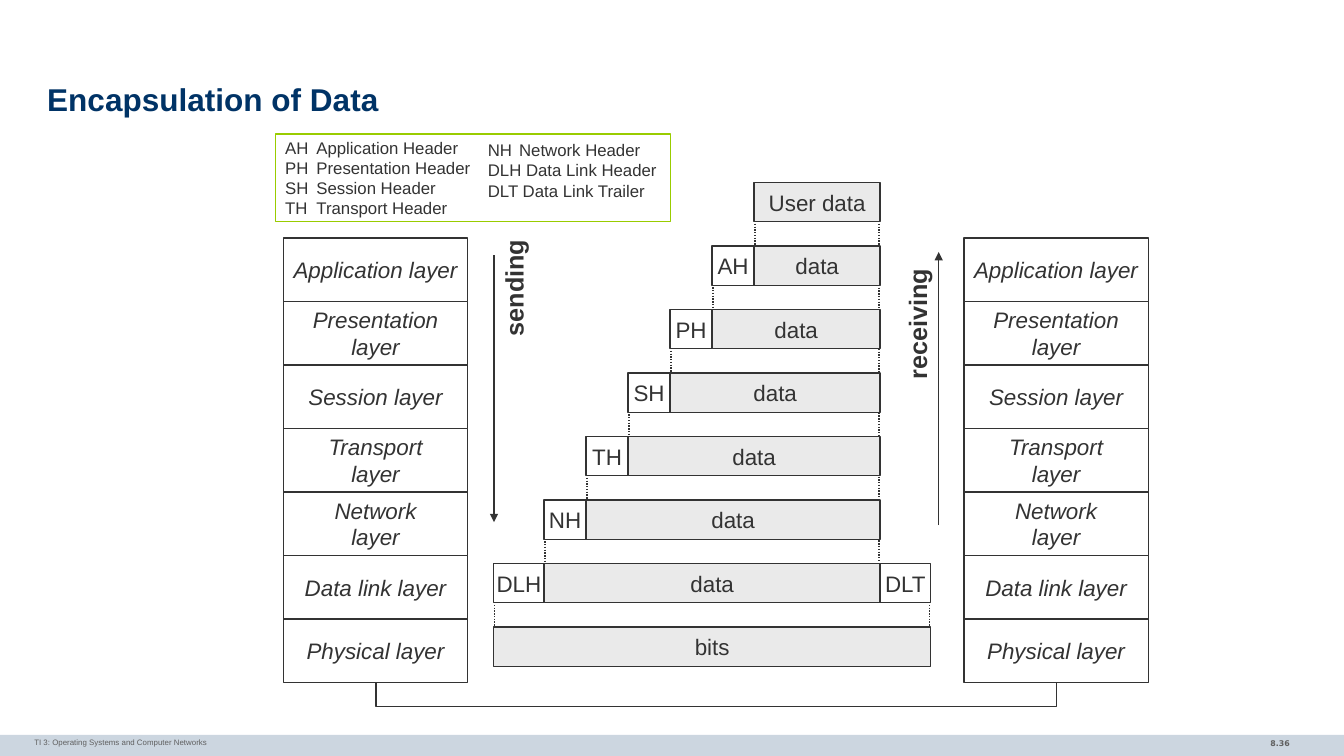
from dataclasses import dataclass

import lxml.etree
import pptx
import pptx.dml.color
import pptx.enum.dml
import pptx.enum.shapes
import pptx.enum.text
import pptx.oxml.ns
import pptx.slide
import pptx.util

Inches = pptx.util.Inches
Align = pptx.enum.text.PP_ALIGN
Anchor = pptx.enum.text.MSO_ANCHOR

INK = "333333"
WHITE = "FFFFFF"
GREY = "EAEAEA"
NAVY = "003366"
FOOTER_GREY = "5F5F5F"
ROW_PITCH = 0.63
STACK_TOP = 2.36
LAYER_WIDTH = 1.83
UNIT_TOP = 1.81
UNIT_HEIGHT = 0.39
DATA_RIGHT = 8.73
USER_WIDTH = 1.25
HEADER_WIDTH = USER_WIDTH / 3
LINK_WIDTH = 0.5


@dataclass
class Area:
    left: float
    top: float
    width: float
    height: float


@dataclass
class Stroke:
    x1: float
    y1: float
    x2: float
    y2: float
    dotted: bool = False
    arrow: bool = False


@dataclass
class Unit:
    header: str
    body: str
    trailer: str = ""


def color(value: str) -> pptx.dml.color.RGBColor:
    return pptx.dml.color.RGBColor.from_string(value)


def write(shape, text: str, *, size: float, ink: str = INK, font: str = "Arial",
          bold: bool = False, italic: bool = False, align=Align.LEFT,
          anchor=Anchor.TOP, wrap: bool = False, tab: float = 0,
          line_spacing: float = 1, inset: float = 0.1) -> None:
    frame = shape.text_frame
    frame.word_wrap = wrap
    frame.vertical_anchor = anchor
    frame.margin_left = frame.margin_right = Inches(inset)
    frame.margin_top = frame.margin_bottom = Inches(0.05)
    for index, line in enumerate(text.split("\n")):
        para = frame.add_paragraph() if index else frame.paragraphs[0]
        para.alignment = align
        para.line_spacing = line_spacing
        if tab:
            tabs = lxml.etree.SubElement(para._p.get_or_add_pPr(), pptx.oxml.ns.qn("a:tabLst"))
            lxml.etree.SubElement(tabs, pptx.oxml.ns.qn("a:tab"),
                                  pos=str(int(Inches(tab))), algn="l")
        span = para.add_run()
        span.text = line
        span.font.name = font
        span.font.size = pptx.util.Pt(size)
        span.font.bold = bold
        span.font.italic = italic
        span.font.color.rgb = color(ink)


def add_box(page: pptx.slide.Slide, area: Area, fill: str, line: str = ""):
    box = page.shapes.add_shape(
        pptx.enum.shapes.MSO_SHAPE.RECTANGLE, Inches(area.left), Inches(area.top),
        Inches(area.width), Inches(area.height))
    box.shadow.inherit = False
    box.fill.solid()
    box.fill.fore_color.rgb = color(fill)
    if line:
        box.line.color.rgb = color(line)
        box.line.width = pptx.util.Pt(1)
    else:
        box.line.fill.background()
    return box


def add_label(page: pptx.slide.Slide, area: Area, text: str, *, rotation: float = 0,
              **style) -> None:
    label = page.shapes.add_textbox(
        Inches(area.left), Inches(area.top), Inches(area.width), Inches(area.height))
    label.rotation = rotation
    write(label, text, **style)


def add_cell(page: pptx.slide.Slide, area: Area, text: str, fill: str = WHITE,
             italic: bool = False) -> None:
    write(add_box(page, area, fill, INK), text, size=16, italic=italic,
          align=Align.CENTER, anchor=Anchor.MIDDLE)


def add_stroke(page: pptx.slide.Slide, stroke: Stroke) -> None:
    line = page.shapes.add_connector(
        pptx.enum.shapes.MSO_CONNECTOR.STRAIGHT, Inches(stroke.x1), Inches(stroke.y1),
        Inches(stroke.x2), Inches(stroke.y2))
    line.line.color.rgb = color(INK)
    line.line.width = pptx.util.Pt(1)
    if stroke.dotted:
        line.line.dash_style = pptx.enum.dml.MSO_LINE.ROUND_DOT
    if stroke.arrow:
        lxml.etree.SubElement(line.line._get_or_add_ln(), pptx.oxml.ns.qn("a:tailEnd"),
                              type="triangle")
    lxml.etree.SubElement(line._element.spPr, pptx.oxml.ns.qn("a:effectLst"))


def add_stack(page: pptx.slide.Slide, left: float) -> None:
    names = ["Application layer", "Presentation\nlayer", "Session layer", "Transport\nlayer",
             "Network\nlayer", "Data link layer", "Physical layer"]
    for index, name in enumerate(names):
        top = STACK_TOP + index * ROW_PITCH
        add_cell(page, Area(left, top, LAYER_WIDTH, ROW_PITCH), name, italic=True)


def add_units(page: pptx.slide.Slide) -> None:
    units = [Unit("", "User data"), Unit("AH", "data"), Unit("PH", "data"), Unit("SH", "data"),
             Unit("TH", "data"), Unit("NH", "data"), Unit("DLH", "data", "DLT"),
             Unit("", "bits")]
    add_stroke(page, Stroke(8.72, 2.22, 8.72, 5.58, dotted=True))
    left, right = DATA_RIGHT - USER_WIDTH, DATA_RIGHT
    for index, unit in enumerate(units):
        top = UNIT_TOP + index * ROW_PITCH
        add_cell(page, Area(left, top, right - left, UNIT_HEIGHT), unit.body, GREY)
        if unit.header:
            width = LINK_WIDTH if unit.trailer else HEADER_WIDTH
            left -= width
            add_cell(page, Area(left, top, width, UNIT_HEIGHT), unit.header)
        if unit.trailer:
            add_cell(page, Area(right, top, LINK_WIDTH, UNIT_HEIGHT), unit.trailer)
            right += LINK_WIDTH
        if index < len(units) - 1:
            edges = [left + 0.01, right - 0.01] if unit.trailer else [left + 0.01]
            for edge in edges:
                add_stroke(page, Stroke(edge, top + 0.41, edge, top + 0.62, dotted=True))


def add_medium(page: pptx.slide.Slide) -> None:
    builder = page.shapes.build_freeform(Inches(3.73), Inches(6.77))
    corners = [(3.73, 7.01), (10.48, 7.01), (10.48, 6.77)]
    builder.add_line_segments([(Inches(x), Inches(y)) for x, y in corners], close=False)
    medium = builder.convert_to_shape()
    medium.shadow.inherit = False
    medium.fill.background()
    medium.line.color.rgb = color(INK)
    medium.line.width = pptx.util.Pt(1)


def add_legend(page: pptx.slide.Slide) -> None:
    legend = add_box(page, Area(2.73, 1.33, 3.92, 0.87), WHITE, "99CC00")
    write(legend, "AH\tApplication Header\nPH\tPresentation Header\n"
          "SH\tSession Header\nTH\tTransport Header",
          size=12, tab=0.31, anchor=Anchor.MIDDLE, wrap=True)
    add_label(page, Area(4.74, 1.34, 1.89, 0.7),
              "NH\tNetwork Header\nDLH Data Link Header\nDLT Data Link Trailer",
              size=12, tab=0.31)


def main() -> None:
    deck = pptx.Presentation()
    deck.slide_width, deck.slide_height = Inches(13.33), Inches(7.5)
    page = deck.slides.add_slide(deck.slide_layouts[6])
    add_box(page, Area(0, 7.29, 13.33, 0.21), "CCD6E0")
    add_label(page, Area(11.1, 7.28, 1.79, 0.23), "8.36", size=5.6, ink=FOOTER_GREY,
              font="DejaVu Sans", bold=True, align=Align.RIGHT, wrap=True)
    add_label(page, Area(0.37, 0.78, 12.6, 0.47), "Encapsulation of Data", size=22.5, ink=NAVY,
              bold=True, anchor=Anchor.MIDDLE, wrap=True, line_spacing=0.85)
    add_label(page, Area(0.34, 7.27, 8.72, 0.25), "TI 3: Operating Systems and Computer Networks",
              size=5.6, ink=FOOTER_GREY, wrap=True, inset=0)
    for left in (2.81, 9.56):
        add_stack(page, left)
    add_units(page)
    add_medium(page)
    add_stroke(page, Stroke(4.9, 2.53, 4.9, 5.18, arrow=True))
    add_label(page, Area(4.51, 2.65, 1.17, 0.4), "sending", rotation=270, size=18, bold=True)
    add_stroke(page, Stroke(9.31, 5.21, 9.31, 2.5, arrow=True))
    add_label(page, Area(8.44, 3.01, 1.31, 0.4), "receiving", rotation=270, size=18, bold=True)
    add_legend(page)
    deck.save("out.pptx")


if __name__ == "__main__":
    main()
